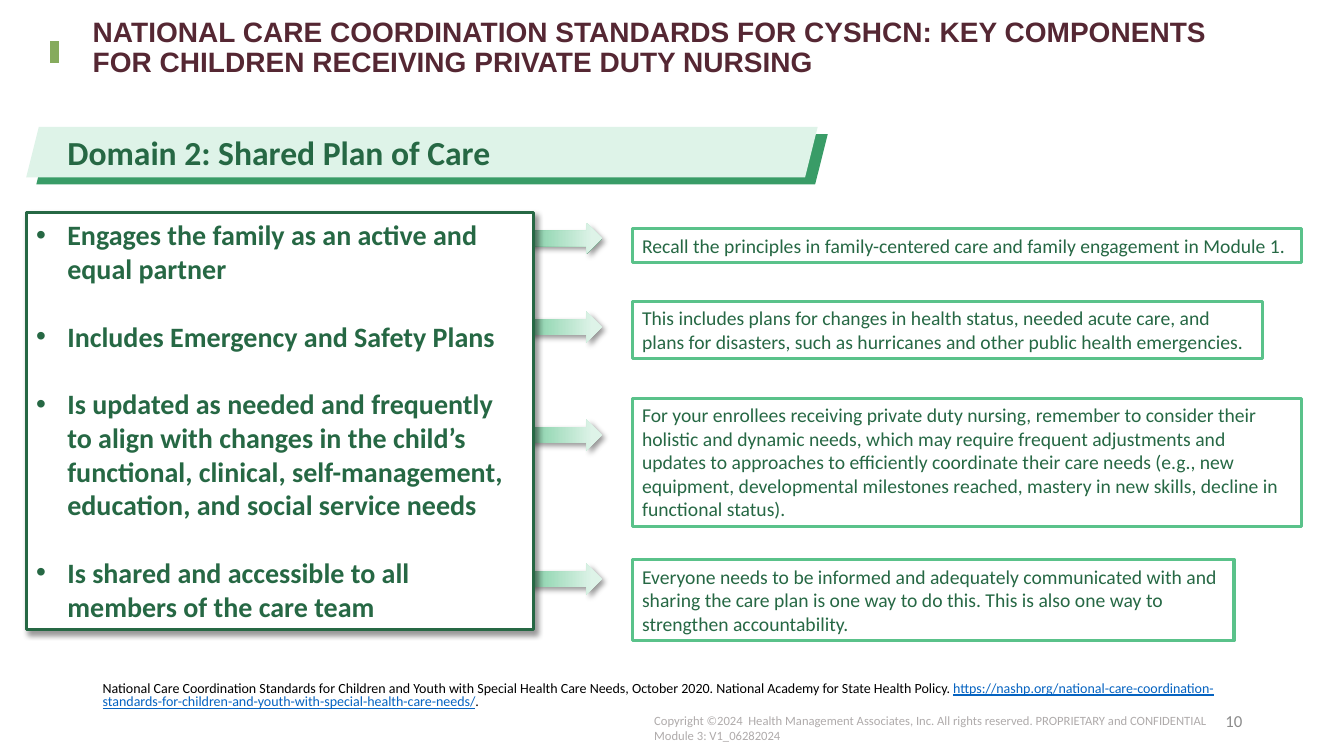
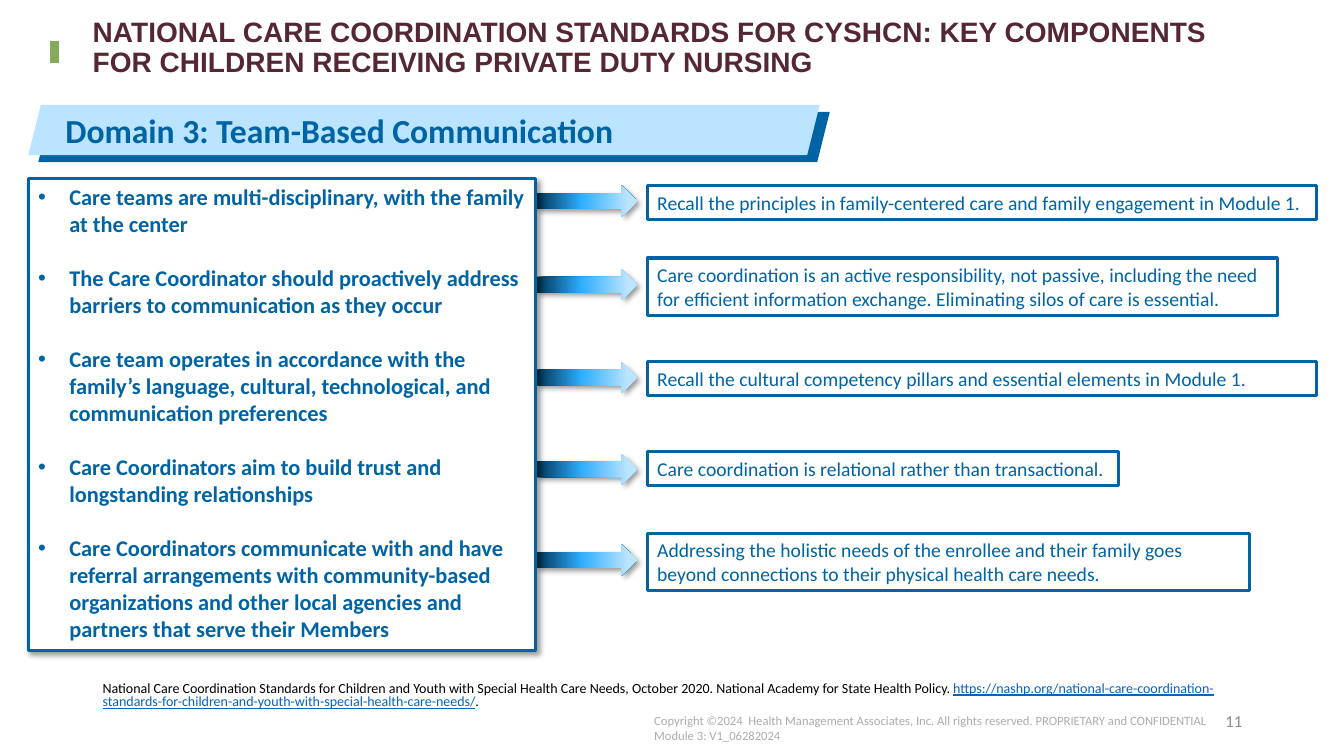
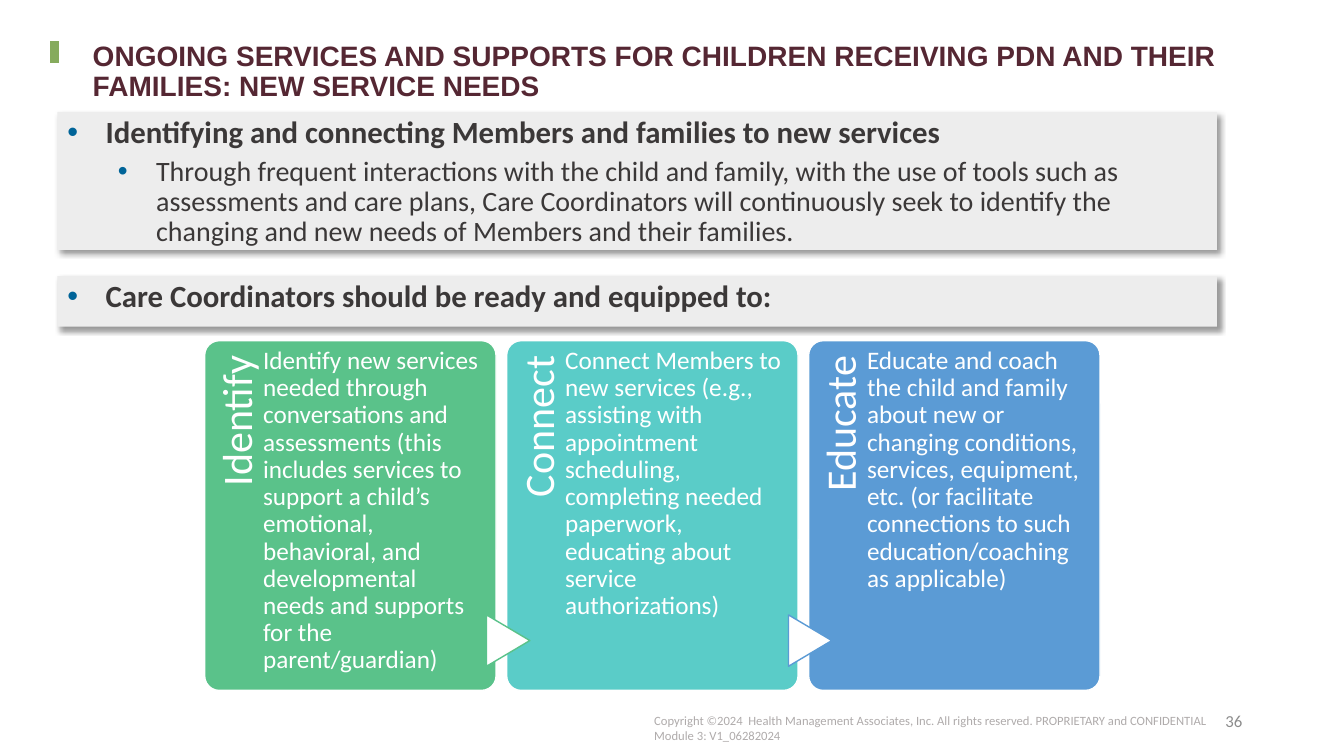
"""Builds three care coordination training slides."""
import dataclasses

import lxml.etree
import pptx
import pptx.dml.color
import pptx.enum.shapes
import pptx.enum.text
import pptx.oxml
import pptx.oxml.ns
import pptx.util

SHAPE = pptx.enum.shapes.MSO_SHAPE
ALIGN = pptx.enum.text.PP_ALIGN
ANCHOR = pptx.enum.text.MSO_ANCHOR
NAMESPACE = pptx.oxml.ns.nsdecls("a")


@dataclasses.dataclass(frozen=True)
class Theme:
    """Colours, fonts and type sizes."""
    heading_font: str = "Arial"
    body_font: str = "Calibri"
    title: str = "552733"
    accent: str = "86AB5D"
    copyright: str = "AFABAB"
    number: str = "8C8C8C"
    link: str = "0563C1"
    panel: str = "EDEDED"
    panel_text: str = "3B3838"
    panel_bullet: str = "006498"
    white: str = "FFFFFF"
    black: str = "000000"
    title_size: int = 20
    domain_size: int = 24
    callout_size: int = 14
    lead_size: int = 22
    detail_size: int = 20
    step_size: int = 30
    step_text_size: int = 18
    source_size: int = 10
    number_size: int = 12
    copyright_size: int = 9


THEME = Theme()
WIDTH, HEIGHT = 13.33, 7.5
MARGIN, CONTENT_WIDTH = 0.92, 11.5

COPYRIGHT = [
    "Copyright ©2024\u00a0 Health Management Associates, Inc. All rights reserved. PROPRIETARY and CONFIDENTIAL".replace("\u00a0", " "),
    "Module 3: V1_06282024",
]
SOURCE = [
    ("National Care Coordination Standards for Children and Youth with Special Health Care Needs, "
     "October 2020. National Academy for State Health Policy. ", {}),
    ("https://nashp.org/national-care-coordination-standards-for-children-and-youth-with-special-health-care-needs/",
     {"color": THEME.link, "underline": True}),
    (".", {}),
]
STANDARDS_TITLE = ("NATIONAL CARE COORDINATION STANDARDS FOR CYSHCN: KEY COMPONENTS "
                   "FOR CHILDREN RECEIVING PRIVATE DUTY NURSING")
SERVICES_TITLE = ("ONGOING SERVICES AND SUPPORTS FOR CHILDREN RECEIVING PDN AND THEIR "
                  "FAMILIES: NEW SERVICE NEEDS")

DOMAINS = [
    {
        "number": "10", "heading": "Domain 2: Shared Plan of Care",
        "dark": "266844", "banner": "DEF3E8", "banner_edge": "399C67", "outline": "5AC28A",
        "gradient": [(0, "266844"), (45, "9CDAB9"), (91, "DEF3E8")],
        "left": 0.26, "banner_top": 1.26, "heading_left": 0.57,
        "list_top": 2.11, "list_height": 4.14, "list_size": 20,
        "arrow_left": 4.97, "callout_left": 6.27,
        "points": [
            ("Engages the family as an active and equal partner", 2.21,
             "Recall the principles in family-centered care and family engagement in Module 1.",
             2.27, 6.64, 1),
            ("Includes Emergency and Safety Plans", 3.09,
             "This includes plans for changes in health status, needed acute care, and plans for "
             "disasters, such as hurricanes and other public health emergencies.",
             2.99, 6.25, 2),
            ("Is updated as needed and frequently to align with changes in the child’s functional, "
             "clinical, self-management, education, and social service needs", 4.16,
             "For your enrollees receiving private duty nursing, remember to consider their holistic "
             "and dynamic needs, which may require frequent adjustments and updates to approaches to "
             "efficiently coordinate their care needs (e.g., new equipment, developmental milestones "
             "reached, mastery in new skills, decline in functional status).",
             3.95, 6.64, 5),
            ("Is shared and accessible to all members of the care team", 5.59,
             "Everyone needs to be informed and adequately communicated with and sharing the care "
             "plan is one way to do this. This is also one way to strengthen accountability.",
             5.55, 5.97, 3),
        ],
    },
    {
        "number": "11", "heading": "Domain 3: Team-Based Communication",
        "dark": "0064A4", "banner": "BAE4FF", "banner_edge": "0064A4", "outline": "0064A4",
        "gradient": [(0, "003252"), (45, "2FAEFF"), (91, "BAE4FF")],
        "left": 0.28, "banner_top": 1.04, "heading_left": 0.55,
        "list_top": 1.77, "list_height": 4.68, "list_size": 16,
        "arrow_left": 5.32, "callout_left": 6.42,
        "points": [
            ("Care teams are multi-disciplinary, with the family at the center", 1.84,
             "Recall the principles in family-centered care and family engagement in Module 1.",
             1.84, 6.64, 1),
            ("The Care Coordinator should proactively address barriers to communication as they occur", 2.67,
             "Care coordination is an active responsibility, not passive, including the need for "
             "efficient information exchange. Eliminating silos of care is essential.",
             2.56, 6.25, 2),
            ("Care team operates in accordance with the family’s language, cultural, technological, "
             "and communication preferences", 3.59,
             "Recall the cultural competency pillars and essential elements in Module 1.",
             3.59, 6.64, 1),
            ("Care Coordinators aim to build trust and longstanding relationships", 4.5,
             "Care coordination is relational rather than transactional.",
             4.48, 4.67, 1),
            ("Care Coordinators communicate with and have referral arrangements with community-based "
             "organizations and other local agencies and partners that serve their Members", 5.4,
             "Addressing the holistic needs of the enrollee and their family goes beyond connections "
             "to their physical health care needs.",
             5.29, 5.97, 2),
        ],
    },
]

LEAD = {"size": THEME.lead_size, "bold": True, "margin": 0.38}
DETAIL = {"size": THEME.detail_size, "margin": 0.88, "level": 1, "before": 5}
PANELS = [
    (1.11, 1.37, [
        ("Identifying and connecting Members and families to new services", LEAD),
        ("Through frequent interactions with the child and family, with the use of tools such as "
         "assessments and care plans, Care Coordinators will continuously seek to identify the "
         "changing and new needs of Members and their families.", DETAIL),
    ]),
    (2.74, 0.5, [("Care Coordinators should be ready and equipped to:", LEAD)]),
]
STEPS = [
    ("Identify", "5AC28A",
     "Identify new services needed through conversations and assessments (this includes services to "
     "support a child’s emotional, behavioral, and developmental needs and supports for the "
     "parent/guardian)"),
    ("Connect", "5ACCC8",
     "Connect Members to new services (e.g., assisting with appointment scheduling, completing needed "
     "paperwork, educating about service authorizations)"),
    ("Educate", "5B9BD5",
     "Educate and coach the child and family about new or changing conditions, services, equipment, "
     "etc. (or facilitate connections to such education/coaching as applicable)"),
]


def inches(*lengths):
    return [pptx.util.Inches(length) for length in lengths]


def rgb(color):
    return pptx.dml.color.RGBColor.from_string(color)


def add_bullet(paragraph, margin, color):
    properties = paragraph._p.get_or_add_pPr()
    properties.set("marL", str(pptx.util.Inches(margin)))
    indent = 0.31 if margin == 0.31 else 0.38
    properties.set("indent", str(-pptx.util.Inches(indent)))
    for markup in (f'<a:buClr {NAMESPACE}><a:srgbClr val="{color}"/></a:buClr>',
                   f'<a:buFont {NAMESPACE} typeface="{THEME.heading_font}"/>',
                   f'<a:buChar {NAMESPACE} char="•"/>'):
        properties.append(pptx.oxml.parse_xml(markup))


def write_text(shape, paragraphs, insets=(0.1, 0.05, 0.1, 0.05), anchor=ANCHOR.TOP, **common):
    """Fill a shape with paragraphs: a string, a list of pieces, or either paired with its format."""
    frame = shape.text_frame
    frame.word_wrap = True
    frame.vertical_anchor = anchor
    frame.margin_left, frame.margin_top, frame.margin_right, frame.margin_bottom = inches(*insets)
    for index, entry in enumerate(paragraphs):
        content, own = entry if isinstance(entry, tuple) else (entry, {})
        style = {**common, **own}
        paragraph = frame.paragraphs[0] if index == 0 else frame.add_paragraph()
        paragraph.alignment = style.get("align", ALIGN.LEFT)
        paragraph.level = style.get("level", 0)
        paragraph.line_spacing = style.get("spacing", 1.0)
        if index and "before" in style:
            paragraph.space_before = pptx.util.Pt(style["before"])
        if "margin" in style:
            add_bullet(paragraph, style["margin"], style.get("bullet_color", style["color"]))
        pieces = [(content, {})] if isinstance(content, str) else content
        for text, changes in pieces:
            look = {**style, **changes}
            run = paragraph.add_run()
            run.text = text
            run.font.name = look.get("font", THEME.body_font)
            run.font.size = pptx.util.Pt(look["size"])
            run.font.bold = look.get("bold", False)
            run.font.underline = look.get("underline", False)
            run.font.color.rgb = rgb(look["color"])


def add_box(slide, place, paragraphs, rotation=0, **style):
    box = slide.shapes.add_textbox(*inches(*place))
    box.rotation = rotation
    write_text(box, paragraphs, **style)


def add_shape(slide, kind, place, fill=None, line=None, line_width=1, shadow=False):
    shape = slide.shapes.add_shape(kind, *inches(*place))
    shape.shadow.inherit = False
    if fill:
        shape.fill.solid()
        shape.fill.fore_color.rgb = rgb(fill)
    else:
        shape.fill.background()
    if line:
        shape.line.color.rgb = rgb(line)
        shape.line.width = pptx.util.Pt(line_width)
    else:
        shape.line.fill.background()
    if shadow:
        effects = shape._element.spPr.find(pptx.oxml.ns.qn("a:effectLst"))
        effects.append(pptx.oxml.parse_xml(
            f'<a:outerShdw {NAMESPACE} blurRad="50800" dist="38100" dir="2700000" algn="tl" rotWithShape="0">'
            f'<a:srgbClr val="{THEME.black}"><a:alpha val="40000"/></a:srgbClr></a:outerShdw>'))
    return shape


def add_gradient_arrow(slide, left, top, gradient):
    arrow = add_shape(slide, SHAPE.RIGHT_ARROW, (left, top, 1, 0.31), shadow=True)
    stops = "".join(f'<a:gs pos="{position * 1000}"><a:srgbClr val="{color}"/></a:gs>'
                    for position, color in gradient)
    properties = arrow._element.spPr
    properties.replace(properties.find(pptx.oxml.ns.qn("a:noFill")), pptx.oxml.parse_xml(
        f'<a:gradFill {NAMESPACE} rotWithShape="1"><a:gsLst>{stops}</a:gsLst>'
        '<a:lin ang="0" scaled="0"/></a:gradFill>'))


def start_slide(presentation, title, title_top, number):
    slide = presentation.slides.add_slide(presentation.slide_layouts[6])
    add_box(slide, (6.39, 7.02, 5.74, 0.4), COPYRIGHT,
            size=THEME.copyright_size, color=THEME.copyright)
    marker = slide.shapes.add_connector(
        pptx.enum.shapes.MSO_CONNECTOR.STRAIGHT, *inches(0.54, 0.41, 0.54, 0.63))
    marker.line.color.rgb = rgb(THEME.accent)
    marker.line.width = pptx.util.Pt(7)
    lxml.etree.SubElement(marker._element.spPr, pptx.oxml.ns.qn("a:effectLst"))
    add_box(slide, (9.42, 6.95, 3, 0.4), [number], anchor=ANCHOR.MIDDLE, align=ALIGN.RIGHT,
            size=THEME.number_size, color=THEME.number)
    add_box(slide, (MARGIN, title_top, CONTENT_WIDTH, 0.61), [title], insets=(0, 0, 0, 0), spacing=0.9,
            font=THEME.heading_font, size=THEME.title_size, color=THEME.title, bold=True)
    return slide


def build_domain(presentation, domain):
    slide = start_slide(presentation, STANDARDS_TITLE, 0.18, domain["number"])
    left, top, dark = domain["left"], domain["banner_top"], domain["dark"]
    for offset_x, offset_y, color in ((0.1, 0.07, domain["banner_edge"]), (0, 0, domain["banner"])):
        add_shape(slide, SHAPE.PARALLELOGRAM, (left + offset_x, top + offset_y, 7.85, 0.5), color)
    add_box(slide, (domain["heading_left"], top, 7.2, 0.5), [domain["heading"]],
            size=THEME.domain_size, color=dark, bold=True)
    for _, arrow_top, *_ in domain["points"]:
        add_gradient_arrow(slide, domain["arrow_left"], arrow_top, domain["gradient"])
    size = domain["list_size"]
    panel = add_shape(slide, SHAPE.RECTANGLE, (left, domain["list_top"], 5.03, domain["list_height"]),
                      THEME.white, dark, 2.25, shadow=True)
    write_text(panel, [point[0] for point in domain["points"]], size=size, color=dark, bold=True,
               margin=0.31, before=round(size * 1.22, 1))
    for _, _, text, callout_top, width, lines in domain["points"]:
        place = (domain["callout_left"], callout_top, width, 0.1 + 0.235 * lines)
        callout = add_shape(slide, SHAPE.RECTANGLE, place, line=domain["outline"], line_width=2.25)
        write_text(callout, [text], size=THEME.callout_size, color=dark)
    add_box(slide, (MARGIN, 6.69, CONTENT_WIDTH, 0.4), [SOURCE], anchor=ANCHOR.BOTTOM, spacing=0.8,
            size=THEME.source_size, color=THEME.black)


def build_services(presentation):
    slide = start_slide(presentation, SERVICES_TITLE, 0.42, "36")
    for top, height, paragraphs in PANELS:
        panel = add_shape(slide, SHAPE.RECTANGLE, (0.57, top, CONTENT_WIDTH, height),
                          THEME.panel, shadow=True)
        write_text(panel, paragraphs, spacing=0.9, color=THEME.panel_text,
                   bullet_color=THEME.panel_bullet)
    first_left, pitch, top, width, height = 2.03, 2.995, 3.38, 2.89, 3.47
    band, label_length = 0.58, 2.85
    for index, (label, color, text) in enumerate(STEPS):
        left = first_left + index * pitch
        card = add_shape(slide, SHAPE.ROUNDED_RECTANGLE, (left, top, width, height), color, THEME.white)
        card.adjustments[0] = 0.05
        label_place = (left + (band - label_length) / 2, top + (label_length - band) / 2, label_length, band)
        add_box(slide, label_place, [label], rotation=270, insets=(0, 0.11, 0.15, 0), align=ALIGN.RIGHT,
                spacing=0.9, size=THEME.step_size, color=THEME.white)
        if index:
            pointer = add_shape(slide, SHAPE.FLOWCHART_EXTRACT, (left - 0.24, 6.14, 0.51, 0.43),
                                THEME.white, STEPS[index - 1][1] if index == 1 else color)
            pointer.rotation = 90
        add_box(slide, (left + band, top, 2.16, height), [text], insets=(0, 0.07, 0, 0), spacing=0.9,
                size=THEME.step_text_size, color=THEME.white)


def main():
    presentation = pptx.Presentation()
    presentation.slide_width, presentation.slide_height = inches(WIDTH, HEIGHT)
    for domain in DOMAINS:
        build_domain(presentation, domain)
    build_services(presentation)
    presentation.save("out.pptx")


if __name__ == "__main__":
    main()
